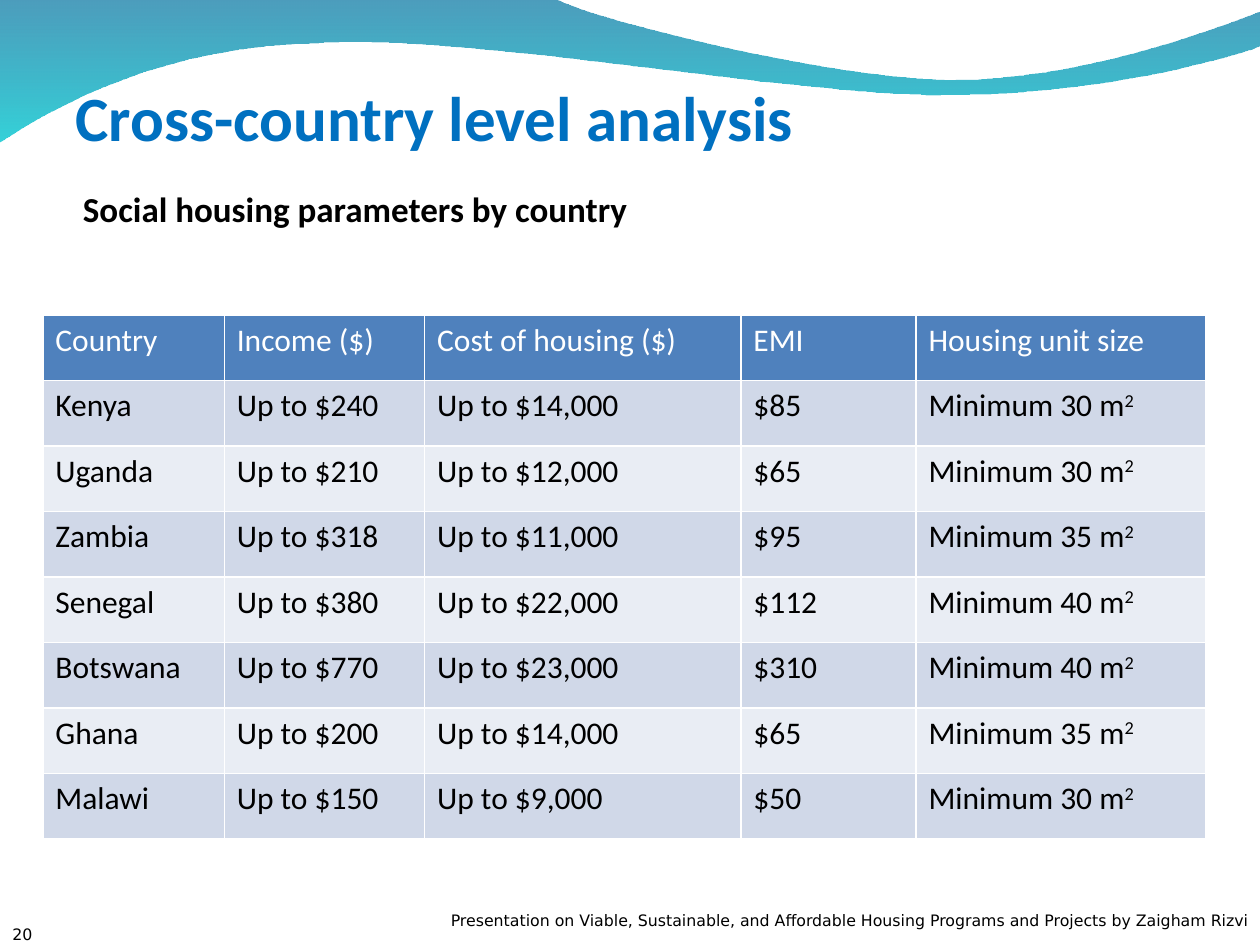
"""Build the slide on social housing parameters by country."""
import pptx
import pptx.dml.color
import pptx.enum.text
import pptx.oxml.ns
import pptx.util
from lxml import etree

Inches = pptx.util.Inches
Pt = pptx.util.Pt
RGBColor = pptx.dml.color.RGBColor
PP_ALIGN = pptx.enum.text.PP_ALIGN
MSO_ANCHOR = pptx.enum.text.MSO_ANCHOR
qn = pptx.oxml.ns.qn

WHITE = RGBColor(0xFF, 0xFF, 0xFF)
BLACK = RGBColor(0x00, 0x00, 0x00)
TITLE_BLUE = RGBColor(0x00, 0x70, 0xC0)
HEADER_BLUE = RGBColor(0x4F, 0x81, 0xBD)
BAND_DARK = RGBColor(0xD0, 0xD8, 0xE8)
BAND_LIGHT = RGBColor(0xE9, 0xED, 0xF4)
WAVE_TOP = RGBColor(0x00, 0x74, 0xA1)
WAVE_BOTTOM = RGBColor(0x00, 0xC6, 0xCF)

WAVE_SEGMENTS = [
    [(4.4, -0.01)],
    [(4.76, 0.17), (6.64, 0.63), (7.58, 0.63)],
    [(8.53, 0.63), (9.58, 0.26), (10, 0.09)],
    [(10.01, 0.36)],
    [(9.83, 0.44), (8.7, 0.76), (7.46, 0.75)],
    [(6.22, 0.75), (3.82, 0.28), (2.57, 0.34)],
    [(1.29, 0.36), (0.46, 0.83), (-0.01, 1.13)],
]

HEADERS = ["Country", "Income ($)", "Cost of housing ($)", "EMI", "Housing unit size"]
COLUMN_WIDTHS = [1.44, 1.59, 2.51, 1.39, 2.3]
ROW_HEIGHT = 0.52
COUNTRIES = [
    ("Kenya", "240", "14,000", "85", 30),
    ("Uganda", "210", "12,000", "65", 30),
    ("Zambia", "318", "11,000", "95", 35),
    ("Senegal", "380", "22,000", "112", 40),
    ("Botswana", "770", "23,000", "310", 40),
    ("Ghana", "200", "14,000", "65", 35),
    ("Malawi", "150", "9,000", "50", 30),
]


def add_run(paragraph, text, size, color, font="Calibri", bold=False):
    run = paragraph.add_run()
    run.text = text
    run.font.name = font
    run.font.size = Pt(size)
    run.font.bold = bold
    run.font.color.rgb = color
    return run


def add_text(slide, box, text, size, color, font="Calibri", bold=False,
             anchor=MSO_ANCHOR.TOP, align=PP_ALIGN.LEFT):
    shape = slide.shapes.add_textbox(*[Inches(value) for value in box])
    shape.text_frame.word_wrap = True
    shape.text_frame.vertical_anchor = anchor
    paragraph = shape.text_frame.paragraphs[0]
    paragraph.alignment = align
    add_run(paragraph, text, size, color, font, bold)


presentation = pptx.Presentation()
presentation.slide_width = Inches(10)
presentation.slide_height = Inches(7.5)
slide = presentation.slides.add_slide(presentation.slide_layouts[6])

wave_points = [(Inches(x), Inches(y)) for segment in WAVE_SEGMENTS for x, y in segment]
for layer in range(2):
    builder = slide.shapes.build_freeform(0, 0)
    builder.add_line_segments(wave_points, close=True)
    wave = builder.convert_to_shape()
    lines = iter(list(wave._element.iter(qn("a:lnTo"))))
    for segment in WAVE_SEGMENTS:
        first_line = next(lines)
        if len(segment) == 3:
            curve = etree.Element(qn("a:cubicBezTo"))
            first_line.addprevious(curve)
            for line in (first_line, next(lines), next(lines)):
                curve.append(line[0])
                line.getparent().remove(line)
    wave.shadow.inherit = False
    wave.line.fill.background()
    wave.fill.gradient()
    wave.fill.gradient_angle = 270
    stops = zip(wave.fill.gradient_stops, (WAVE_TOP, WAVE_BOTTOM), (0, 1), (45, 55))
    for stop, color, position, opacity in stops:
        stop.color.rgb = color
        stop.position = position
        color_element = stop._gs.find(qn("a:srgbClr"))
        etree.SubElement(color_element, qn("a:alpha"), val=str(opacity * 1000))

add_text(slide, (0.5, 0.3, 9, 1.25), "Cross-country level analysis", 36, TITLE_BLUE,
         bold=True, anchor=MSO_ANCHOR.MIDDLE)

table = slide.shapes.add_table(
    len(COUNTRIES) + 1, len(HEADERS), Inches(0.34), Inches(2.5),
    Inches(sum(COLUMN_WIDTHS)), Inches(ROW_HEIGHT * (len(COUNTRIES) + 1))).table
for column, width in zip(table.columns, COLUMN_WIDTHS):
    column.width = Inches(width)
for row in table.rows:
    row.height = Inches(ROW_HEIGHT)

table_rows = [HEADERS]
for country, income, cost, installment, size in COUNTRIES:
    table_rows.append([country, f"Up to ${income}", f"Up to ${cost}",
                       f"${installment}", f"Minimum {size} m"])

for row_index, texts in enumerate(table_rows):
    is_header = row_index == 0
    band = BAND_DARK if row_index % 2 else BAND_LIGHT
    for column_index, text in enumerate(texts):
        cell = table.cell(row_index, column_index)
        properties = cell._tc.get_or_add_tcPr()
        for side in ("L", "R", "T", "B"):
            border = etree.SubElement(properties, qn(f"a:ln{side}"), w=str(Pt(1)))
            border_fill = etree.SubElement(border, qn("a:solidFill"))
            etree.SubElement(border_fill, qn("a:srgbClr"), val=str(WHITE))
        cell.fill.solid()
        cell.fill.fore_color.rgb = HEADER_BLUE if is_header else band
        paragraph = cell.text_frame.paragraphs[0]
        text_color = WHITE if is_header else BLACK
        add_run(paragraph, text, 18, text_color)
        if not is_header and column_index == len(HEADERS) - 1:
            exponent = add_run(paragraph, "2", 18, text_color)
            exponent._r.get_or_add_rPr().set("baseline", "30000")

add_text(slide, (3, 7.18, 7, 0.4),
         "Presentation on Viable, Sustainable, and Affordable Housing Programs "
         "and Projects by Zaigham Rizvi",
         9, BLACK, font="DejaVu Sans", align=PP_ALIGN.RIGHT)
add_text(slide, (0, 7.29, 0.67, 0.3), "20", 9, BLACK, font="DejaVu Sans")
add_text(slide, (0.56, 1.25, 9, 0.81), "Social housing parameters by country", 20, BLACK,
         bold=True, anchor=MSO_ANCHOR.MIDDLE)

presentation.save("out.pptx")
